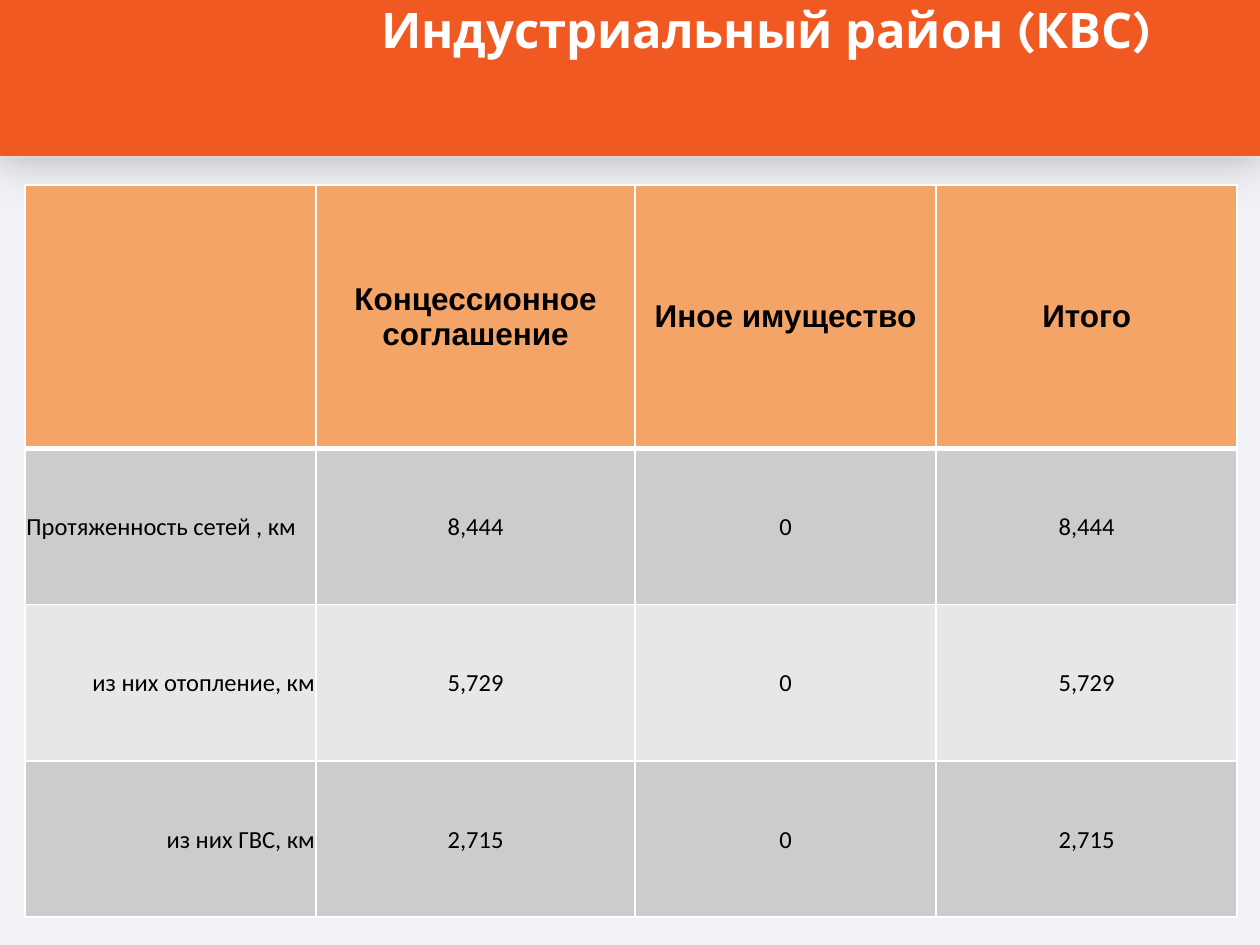
from dataclasses import dataclass

from lxml import etree
from pptx import Presentation
from pptx.dml.color import RGBColor
from pptx.enum.shapes import MSO_SHAPE
from pptx.enum.text import MSO_ANCHOR, PP_ALIGN
from pptx.oxml.ns import qn
from pptx.util import Inches, Pt

RECTANGLE = MSO_SHAPE.RECTANGLE
MIDDLE = MSO_ANCHOR.MIDDLE
LEFT, CENTER, RIGHT = PP_ALIGN.LEFT, PP_ALIGN.CENTER, PP_ALIGN.RIGHT


@dataclass(frozen=True)
class Theme:
    page: str = "F0F2F5"
    banner: str = "F15922"
    white: str = "FFFFFF"
    black: str = "000000"
    header: str = "F4A467"
    bands: tuple = ("CCCCCC", "E7E7E7")
    title_font: str = "Karla"
    header_font: str = "Arial"
    body_font: str = "Calibri"
    title_size: int = 28
    header_size: int = 18
    body_size: int = 14


def add_element(parent, tag, **attributes):
    element = etree.SubElement(parent, qn(tag))
    for name, value in attributes.items():
        element.set(name, str(value))
    return element


class SlideBuilder:
    def __init__(self, slide, theme):
        self.slide = slide
        self.theme = theme

    def set_text(self, frame, text, font_name, size, color, bold, align):
        frame.text = text
        para = frame.paragraphs[0]
        para.alignment = align
        for span in para.runs:
            span.font.name = font_name
            span.font.size = Pt(size)
            span.font.bold = bold
            span.font.color.rgb = RGBColor.from_string(color)

    def panel(self, left, top, width, height, color, shadow=None):
        box = self.slide.shapes.add_shape(
            RECTANGLE, Inches(left), Inches(top), Inches(width), Inches(height))
        box.fill.solid()
        box.fill.fore_color.rgb = RGBColor.from_string(color)
        box.line.fill.background()
        box.shadow.inherit = False
        if shadow:
            opacity, blur, distance = shadow
            effects = box._element.spPr.find(qn("a:effectLst"))
            outer = add_element(effects, "a:outerShdw", blurRad=Pt(blur), dist=Pt(distance),
                                dir=90 * 60000, rotWithShape=0)
            tint = add_element(outer, "a:srgbClr", val=self.theme.black)
            add_element(tint, "a:alpha", val=opacity * 1000)

    def title(self, text, left, top, width, height):
        box = self.slide.shapes.add_textbox(
            Inches(left), Inches(top), Inches(width), Inches(height))
        frame = box.text_frame
        frame.word_wrap = True
        frame.margin_left = frame.margin_right = 0
        frame.margin_top = frame.margin_bottom = 0
        self.set_text(frame, text, self.theme.title_font, self.theme.title_size,
                      self.theme.white, True, CENTER)

    def borders(self, cell, bottom, top):
        properties = cell._tc.get_or_add_tcPr()
        for side, width in (("L", 1), ("R", 1), ("T", top), ("B", bottom)):
            line = add_element(properties, "a:ln" + side, w=Pt(width))
            fill = add_element(line, "a:solidFill")
            add_element(fill, "a:srgbClr", val=self.theme.white)

    def table(self, rows, left, top, widths, heights):
        theme = self.theme
        table = self.slide.shapes.add_table(
            len(rows), len(widths), Inches(left), Inches(top),
            Inches(sum(widths)), Inches(sum(heights))).table
        for column, width in zip(table.columns, widths):
            column.width = Inches(width)
        for row, height in zip(table.rows, heights):
            row.height = Inches(height)

        for r, values in enumerate(rows):
            is_header = r == 0
            color = theme.header if is_header else theme.bands[(r - 1) % 2]
            for c, text in enumerate(values):
                cell = table.cell(r, c)
                cell.vertical_anchor = MIDDLE
                self.borders(cell, bottom=3 if is_header else 1, top=3 if r == 1 else 1)
                cell.fill.solid()
                cell.fill.fore_color.rgb = RGBColor.from_string(color)
                if is_header:
                    self.set_text(cell.text_frame, text, theme.header_font,
                                  theme.header_size, theme.black, True, CENTER)
                    continue
                cell.margin_left = cell.margin_right = cell.margin_top = Inches(0.01)
                cell.margin_bottom = 0
                # The total is flush left, its parts flush right
                label_align = LEFT if r == 1 else RIGHT
                self.set_text(cell.text_frame, text, theme.body_font, theme.body_size,
                              theme.black, False, CENTER if c else label_align)


def main():
    deck = Presentation()
    deck.slide_width, deck.slide_height = Inches(10), Inches(7.5)
    page = deck.slides.add_slide(deck.slide_layouts[6])
    theme = Theme()
    builder = SlideBuilder(page, theme)

    # Background and banner
    builder.panel(-0.01, 0, 10.02, 7.5, theme.page)
    builder.panel(-0.01, -0.01, 10.02, 1.26, theme.white, shadow=(8, 15, 1))
    builder.panel(-0.01, -0.02, 10.02, 1.26, theme.banner, shadow=(17, 29, 3))
    builder.title("Индустриальный район (КВС)", 2.17, 0, 7.83, 1.23)

    # Network lengths
    rows = [
        ("", "Концессионное соглашение", "Иное имущество", "Итого"),
        ("Протяженность сетей , км", "8,444", "0", "8,444"),
        ("из них отопление, км", "5,729", "0", "5,729"),
        ("из них ГВС, км", "2,715", "0", "2,715"),
    ]
    builder.table(rows, 0.2, 1.47, widths=[2.31, 2.53, 2.39, 2.39],
                  heights=[2.09] + [1.24] * 3)

    deck.save("out.pptx")


if __name__ == "__main__":
    main()
